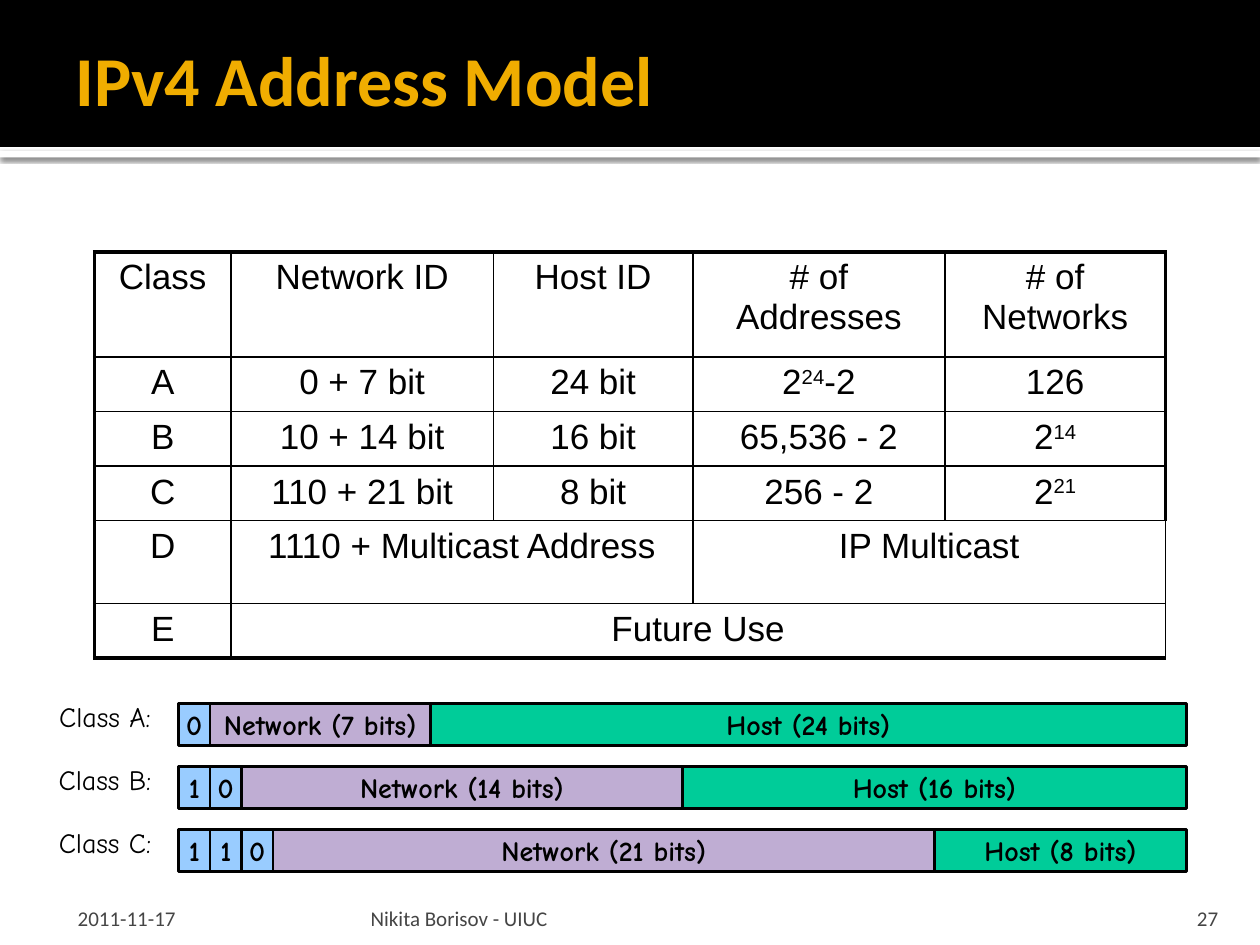
"""Build the IPv4 address model slide: class table and bit-layout bars."""
from lxml.etree import SubElement
from pptx import Presentation
from pptx.dml.color import RGBColor
from pptx.enum.shapes import MSO_SHAPE
from pptx.enum.text import MSO_ANCHOR, PP_ALIGN
from pptx.oxml import parse_xml
from pptx.oxml.ns import nsdecls, qn
from pptx.util import Pt

TITLE = "IPv4 Address Model"
ROWS = [
    ["Class", "Network ID", "Host ID", "# of Addresses", "# of Networks"],
    ["A", "0 + 7 bit", "24 bit", "2^24^-2", "126"],
    ["B", "10 + 14 bit", "16 bit", "65,536 - 2", "2^14"],
    ["C", "110 + 21 bit", "8 bit", "256 - 2", "2^21"],
    ["D", "1110 + Multicast Address", "", "IP Multicast", ""],
    ["E", "Future Use", "", "", ""],
]
MERGES = [((4, 1), (4, 2)), ((4, 3), (4, 4)), ((5, 1), (5, 4))]
COLUMN_WIDTHS = [130, 250, 190, 240, 210]
ROW_HEIGHTS = [100, 52, 52, 52, 79, 52]
LAYOUTS = [("Class A:", "0", 7, 24), ("Class B:", "10", 14, 16), ("Class C:", "110", 21, 8)]
FOOTERS = [
    ("2011-11-17", (60, 850, 280, 36), (14, 6), PP_ALIGN.LEFT),
    ("Nikita Borisov - UIUC", (347, 850, 722, 36), (6, 6), PP_ALIGN.LEFT),
    ("27", (1076, 850, 96, 36), (12, 12), PP_ALIGN.RIGHT),
]

BLACK = RGBColor(0x00, 0x00, 0x00)
WHITE = RGBColor(0xFF, 0xFF, 0xFF)
GOLD = RGBColor(0xF0, 0xAD, 0x00)
GREY = RGBColor(0x45, 0x45, 0x45)
PREFIX_BLUE = RGBColor(0x99, 0xCC, 0xFF)
NETWORK_PURPLE = RGBColor(0xBF, 0xAD, 0xD3)
HOST_GREEN = RGBColor(0x00, 0xCC, 0x99)

PX = 7620
BIT = 30
BAR_LEFT, BAR_TOP, BAR_HEIGHT, BAR_PITCH = 170, 670, 40, 60
THIN, THICK = Pt(1), Pt(2.25)


def px(*lengths):
    return [length * PX for length in lengths]


def style(paragraph, font, size, color, bold=False, align=PP_ALIGN.CENTER):
    paragraph.alignment = align
    for run in paragraph.runs:
        run.font.name, run.font.size, run.font.bold = font, Pt(size), bold
        run.font.color.rgb = color


def add_box(slide, box, color, outlined=False):
    shape = slide.shapes.add_shape(MSO_SHAPE.RECTANGLE, *px(*box))
    shape.shadow.inherit = False
    shape.fill.solid()
    shape.fill.fore_color.rgb = color
    if outlined:
        shape.line.color.rgb = BLACK
        shape.line.width = Pt(1.5)
    else:
        shape.line.fill.background()
    return shape


def add_header(slide):
    strip = add_box(slide, (0, 144, 1200, 6), WHITE)
    effects = strip._element.spPr.find(qn("a:effectLst"))
    effects.append(parse_xml(
        f'<a:outerShdw {nsdecls("a")} blurRad="31750" dist="10160" dir="5400000">'
        '<a:srgbClr val="000000"><a:alpha val="60000"/></a:srgbClr></a:outerShdw>'))
    add_box(slide, (0, 0, 1200, 140), BLACK)
    title = slide.shapes.title
    slide.shapes._spTree.append(title._element)
    title.left, title.top, title.width, title.height = px(60, 10, 1080, 130)
    frame = title.text_frame
    frame.text = TITLE
    frame.vertical_anchor = MSO_ANCHOR.MIDDLE
    frame.margin_left, frame.margin_right = px(12, 6)
    style(frame.paragraphs[0], "Calibri", 40, GOLD, True, PP_ALIGN.LEFT)


def set_borders(cell, widths):
    properties = cell._tc.get_or_add_tcPr()
    for side, width in zip("LRTB", widths):
        line = SubElement(properties, qn(f"a:ln{side}"), w=str(width))
        SubElement(SubElement(line, qn("a:solidFill")), qn("a:srgbClr"), val=str(BLACK))


def fill_cell(cell, text):
    paragraph = cell.text_frame.paragraphs[0]
    for index, piece in enumerate(text.split("^") if text else []):
        run = paragraph.add_run()
        run.text = piece
        if index % 2:
            run.font._element.set("baseline", "30000")
    style(paragraph, "Arial", 20, BLACK)
    cell.fill.background()


def add_class_table(slide):
    last_row, last_column = len(ROWS) - 1, len(COLUMN_WIDTHS) - 1
    table = slide.shapes.add_table(
        len(ROWS), len(COLUMN_WIDTHS),
        *px(90, 240, sum(COLUMN_WIDTHS), sum(ROW_HEIGHTS))).table
    table.first_row = table.horz_banding = False
    for column, width in zip(table.columns, COLUMN_WIDTHS):
        column.width = width * PX
    for row, height in zip(table.rows, ROW_HEIGHTS):
        row.height = height * PX
    for r, texts in enumerate(ROWS):
        for c, text in enumerate(texts):
            cell = table.cell(r, c)
            outer = (c == 0, c == last_column, r == 0, r == last_row)
            set_borders(cell, [THICK if edge else THIN for edge in outer])
            fill_cell(cell, text)
    for first, last in MERGES:
        table.cell(*first).merge(table.cell(*last))


def add_text(slide, text, box):
    frame = slide.shapes.add_textbox(*px(*box)).text_frame
    frame.word_wrap = True
    frame.text = text
    return frame


def add_bit_layouts(slide):
    for index, (label, prefix, network, host) in enumerate(LAYOUTS):
        top = BAR_TOP + index * BAR_PITCH
        fields = [(bit, 1, PREFIX_BLUE) for bit in prefix]
        fields += [(f"Network ({network} bits)", network, NETWORK_PURPLE),
                   (f"Host ({host} bits)", host, HOST_GREEN)]
        left = BAR_LEFT
        for text, bits, color in fields:
            field = add_box(slide, (left, top, bits * BIT, BAR_HEIGHT), color, True)
            frame = field.text_frame
            frame.word_wrap = False
            frame.vertical_anchor = MSO_ANCHOR.MIDDLE
            frame.text = text
            style(frame.paragraphs[0], "Comic Neue", 16, BLACK, True)
            left += bits * BIT
        caption = add_text(slide, label, (30, top - 10, 140, 44))
        style(caption.paragraphs[0], "Comic Neue", 16, BLACK)


def add_footers(slide):
    for text, box, margins, align in FOOTERS:
        frame = add_text(slide, text, box)
        frame.vertical_anchor = MSO_ANCHOR.BOTTOM
        frame.margin_left, frame.margin_right = px(*margins)
        frame.margin_bottom = 0
        style(frame.paragraphs[0], "Calibri", 12, GREY, align=align)


def main():
    presentation = Presentation()
    presentation.slide_width, presentation.slide_height = px(1200, 900)
    slide = presentation.slides.add_slide(presentation.slide_layouts[5])
    add_header(slide)
    add_class_table(slide)
    add_bit_layouts(slide)
    add_footers(slide)
    presentation.save("out.pptx")


if __name__ == "__main__":
    main()
